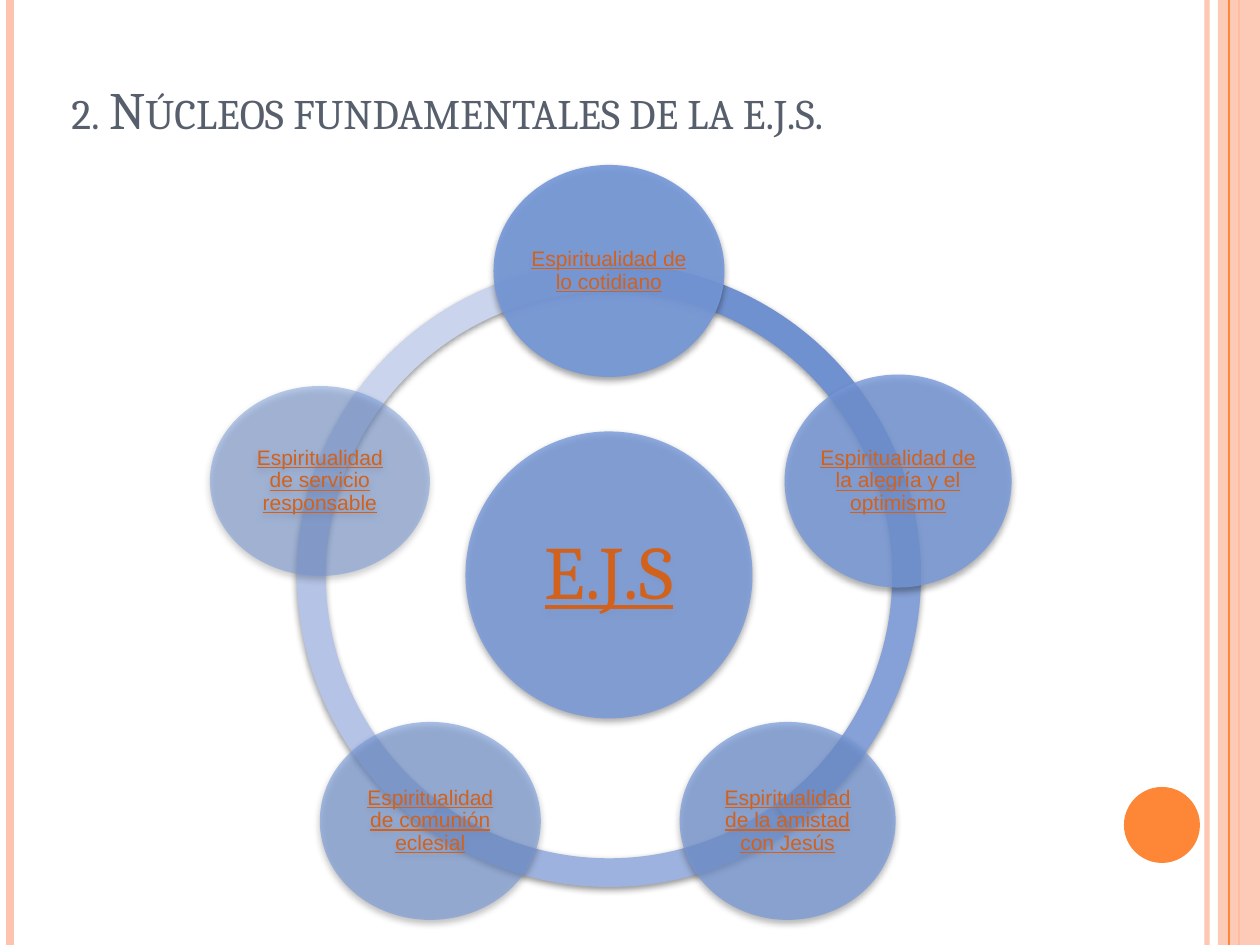
import math

import pptx
import pptx.dml.color
import pptx.enum.shapes
import pptx.enum.text
import pptx.oxml
import pptx.oxml.ns
import pptx.util

RGB = pptx.dml.color.RGBColor
SHAPE = pptx.enum.shapes.MSO_SHAPE
ALIGN = pptx.enum.text.PP_ALIGN
ANCHOR = pptx.enum.text.MSO_ANCHOR
qn = pptx.oxml.ns.qn

EMU_PER_PX = 914400 / 126
WIDTH, HEIGHT = 1260, 945

PEACH = RGB(0xFE, 0xC3, 0xAE)
ORANGE = RGB(0xFE, 0x86, 0x37)
SLATE = RGB(0x57, 0x5F, 0x6D)
RUST = RGB(0xD2, 0x61, 0x1C)
BLUE = RGB(0x75, 0x98, 0xD9)
RING_BLUES = [
    RGB(0x70, 0x91, 0xCF),
    RGB(0x86, 0xA1, 0xD7),
    RGB(0x9D, 0xB2, 0xDE),
    RGB(0xB4, 0xC3, 0xE6),
    RGB(0xCA, 0xD4, 0xED),
]

CENTRE_X, CENTRE_Y = 609, 575
RING_SIZE, CORE_SIZE, ORBIT = 624, 287, 304
STEP = 72

# text, width, height, opacity; clockwise from the top
NODES = [
    ("Espiritualidad de lo cotidiano", 231, 212, 90),
    ("Espiritualidad de la alegría y el optimismo", 227, 213, 80),
    ("Espiritualidad de la amistad con Jesús", 216, 198, 70),
    ("Espiritualidad de comunión eclesial", 221, 198, 60),
    ("Espiritualidad de servicio responsable", 220, 190, 50),
]


def px(n):
    return pptx.util.Emu(round(n * EMU_PER_PX))


def set_opacity(fill_parent, percent):
    color = fill_parent.find(qn("a:solidFill"))[0]
    color.append(pptx.oxml.parse_xml(
        f'<a:alpha {pptx.oxml.ns.nsdecls("a")} val="{percent * 1000}"/>'))


class Slide:
    def __init__(self, prs):
        self.s = prs.slides.add_slide(prs.slide_layouts[6])

    def vertical_line(self, x, color, width, opacity=100):
        line = self.s.shapes.add_connector(
            pptx.enum.shapes.MSO_CONNECTOR.STRAIGHT, px(x), 0, px(x), px(HEIGHT))
        line.line.color.rgb = color
        line.line.width = pptx.util.Pt(width)
        sp_pr = line._element.spPr
        set_opacity(sp_pr.find(qn("a:ln")), opacity)
        sp_pr.append(pptx.oxml.parse_xml(
            f'<a:effectLst {pptx.oxml.ns.nsdecls("a")}/>'))

    def shape(self, kind, x, y, w, h, color, opacity=100):
        sp = self.s.shapes.add_shape(kind, px(x), px(y), px(w), px(h))
        sp.shadow.inherit = False
        sp.fill.solid()
        sp.fill.fore_color.rgb = color
        sp.line.fill.background()
        set_opacity(sp._element.spPr, opacity)
        return sp

    def drop_shadow(self, sp, distance, opacity):
        effects = sp._element.spPr.find(qn("a:effectLst"))
        effects.append(pptx.oxml.parse_xml(
            f'<a:outerShdw {pptx.oxml.ns.nsdecls("a")} blurRad="{pptx.util.Pt(4)}" '
            f'dist="{pptx.util.Pt(distance)}" dir="5400000" rotWithShape="0">'
            f'<a:srgbClr val="000000"><a:alpha val="{opacity * 1000}"/></a:srgbClr>'
            '</a:outerShdw>'))

    def ring_arc(self, start, color):
        """Draw one step of the ring, clockwise from start in degrees."""
        half = RING_SIZE / 2
        sp = self.shape(SHAPE.BLOCK_ARC, CENTRE_X - half, CENTRE_Y - half,
                        RING_SIZE, RING_SIZE, color)
        # Angles are stored in 1/60000 degree, adjustments in 1/100000.
        sp.adjustments[0] = start % 360 * 0.6
        sp.adjustments[1] = (start + STEP) % 360 * 0.6
        sp.adjustments[2] = 0.046
        self.drop_shadow(sp, 1.6, 42)

    def bubble(self, text, cx, cy, w, h, opacity, font, size, inset):
        sp = self.shape(SHAPE.OVAL, cx - w / 2, cy - h / 2, w, h, BLUE, opacity)
        self.drop_shadow(sp, 2, 40)
        tf = sp.text_frame
        tf.word_wrap = True
        tf.vertical_anchor = ANCHOR.MIDDLE
        tf.margin_left = tf.margin_right = px(inset)
        tf.margin_top = tf.margin_bottom = px(inset)
        p = self.put_text(tf, text, font, size, RUST)
        p.alignment = ALIGN.CENTER
        p.line_spacing = 0.9
        p.font.underline = True

    def title(self, text, x, y, w, h):
        tf = self.s.shapes.add_textbox(px(x), px(y), px(w), px(h)).text_frame
        tf.word_wrap = True
        tf.vertical_anchor = ANCHOR.BOTTOM
        p = self.put_text(tf, text, "Cambria", 30, SLATE)
        p.runs[0].font._element.set("cap", "small")

    def put_text(self, tf, text, font, size, color):
        p = tf.paragraphs[0]
        p.text = text
        p.font.name = font
        p.font.size = pptx.util.Pt(size)
        p.font.color.rgb = color
        return p


def main():
    prs = pptx.Presentation()
    prs.slide_width, prs.slide_height = px(WIDTH), px(HEIGHT)
    s = Slide(prs)

    s.vertical_line(1207, PEACH, 3, 93)
    s.vertical_line(10, PEACH, 4.5)
    s.vertical_line(1239, ORANGE, 1.5)
    s.shape(SHAPE.RECTANGLE, 1218, 0, 42, HEIGHT, PEACH, 87)
    s.vertical_line(1229, ORANGE, 0.75)
    s.shape(SHAPE.OVAL, 1124, 787, 76, 76, ORANGE)

    s.title("2. Núcleos fundamentales de la e.j.s.", 59, 29, 1029, 117)

    for i, color in reversed(list(enumerate(RING_BLUES))):
        s.ring_arc(270 + i * STEP, color)
    s.bubble("E.J.S", CENTRE_X, CENTRE_Y, CORE_SIZE, CORE_SIZE, 80,
             "Cambria", 43, 8)
    for i, (text, w, h, opacity) in enumerate(NODES):
        angle = math.radians(i * STEP - 90)
        s.bubble(text, CENTRE_X + ORBIT * math.cos(angle),
                 CENTRE_Y + ORBIT * math.sin(angle), w, h, opacity,
                 "Arial", 12, 2)

    prs.save("out.pptx")


if __name__ == "__main__":
    main()
